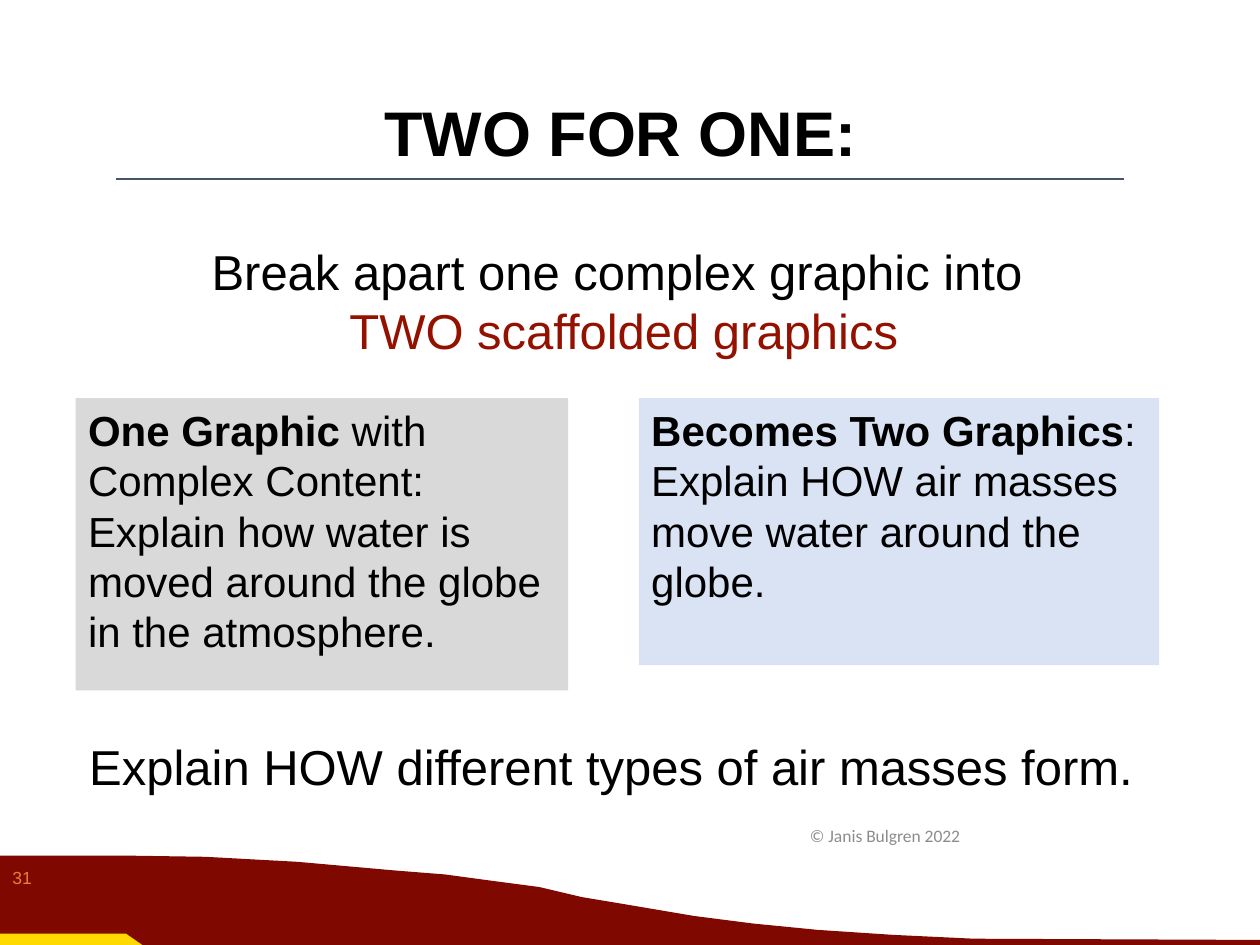
import pptx
import pptx.util
import pptx.dml.color
import pptx.enum.shapes
import pptx.enum.text
import pptx.oxml.xmlchemy
from pptx.util import Inches

COLORS = {
    "text": "000000", "accent": "941100", "muted": "8C8C8C", "number": "ED7D31",
    "gray": "D9D9D9", "blue": "DAE3F3", "rule": "44546A",
    "maroon": "7F0900", "gold": "FFD900",
}
LINE_FACTOR = 1.2


def rgb(name):
    return pptx.dml.color.RGBColor.from_string(COLORS[name])


def write(shape, paragraphs, size, color="text", font="Arial", align="LEFT", anchor="TOP"):
    """Fill a shape; each paragraph is a list of (text, run formats), "\\n" is a line break."""
    frame = shape.text_frame
    frame_formats = {
        "word_wrap": True,
        "auto_size": pptx.enum.text.MSO_AUTO_SIZE.NONE,
        "vertical_anchor": getattr(pptx.enum.text.MSO_ANCHOR, anchor),
    }
    for key, value in frame_formats.items():
        setattr(frame, key, value)
    for index, pieces in enumerate(paragraphs):
        paragraph = frame.paragraphs[0] if index == 0 else frame.add_paragraph()
        paragraph.alignment = getattr(pptx.enum.text.PP_ALIGN, align)
        paragraph.line_spacing = pptx.util.Pt(round(size * LINE_FACTOR, 1))
        for text, formats in pieces:
            if text == "\n":
                paragraph.add_line_break()
                continue
            run = paragraph.add_run()
            run.text = text
            run_formats = {"name": font, "size": pptx.util.Pt(size), "bold": False, **formats}
            run_color = run_formats.pop("color", color)
            for key, value in run_formats.items():
                setattr(run.font, key, value)
            run.font.color.rgb = rgb(run_color)


deck = pptx.Presentation()
deck.slide_width, deck.slide_height = Inches(10), Inches(7.5)
slide = deck.slides.add_slide(deck.slide_layouts[5])
shapes = slide.shapes

# Footer wave and corner
wave = [
    (10, 7.5), (0, 7.5), (0, 6.79), (0.46, 6.79), (0.98, 6.79), (1.63, 6.8),
    (2.36, 6.84), (3.15, 6.91), (3.53, 6.94), (3.9, 6.99), (4.28, 7.04),
    (4.62, 7.12), (4.86, 7.16), (5.51, 7.27), (5.98, 7.33), (6.49, 7.38),
    (7.09, 7.42), (7.73, 7.45), (10, 7.46),
]
corner = [(0, 7.41), (1, 7.41), (1.13, 7.5), (0, 7.5)]
for outline, color in ((wave, "maroon"), (corner, "gold")):
    points = [(Inches(x), Inches(y)) for x, y in outline]
    builder = shapes.build_freeform(*points[0])
    builder.add_line_segments(points[1:], close=True)
    band = builder.convert_to_shape()
    band.shadow.inherit = False
    band.fill.solid()
    band.fill.fore_color.rgb = rgb(color)
    band.line.fill.background()

# Rule under the heading
rule = shapes.add_connector(
    pptx.enum.shapes.MSO_CONNECTOR.STRAIGHT,
    Inches(0.92), Inches(1.42), Inches(8.92), Inches(1.42))
rule.line.color.rgb = rgb("rule")
rule.line.width = pptx.util.Pt(1.5)
rule._element.spPr.append(pptx.oxml.xmlchemy.OxmlElement("a:effectLst"))

# Title
title = shapes.title
title_place = {"left": 0.7, "top": 1.98, "width": 8.5, "height": 0.92}
for key, value in title_place.items():
    setattr(title, key, Inches(value))
write(title, [[("Break apart one complex graphic into ", {}), ("\n", {}),
               ("TWO scaffolded graphics", {"color": "accent"})]],
      28, align="CENTER", anchor="BOTTOM")

# Before and after panels
panels = [
    ((0.6, 3.16, 3.91, 2.32), "gray", [
        [("One Graphic ", {"bold": True}), ("with Complex Content:", {})],
        [("Explain how water is moved around the globe in the atmosphere.", {})]]),
    ((5.07, 3.16, 4.13, 2.12), "blue", [
        [("Becomes Two Graphics", {"bold": True}), (":", {})],
        [("Explain HOW air masses move water around the globe.", {})]]),
]
for place, color, paragraphs in panels:
    panel = shapes.add_shape(pptx.enum.shapes.MSO_SHAPE.RECTANGLE, *map(Inches, place))
    panel.shadow.inherit = False
    panel.fill.solid()
    panel.fill.fore_color.rgb = rgb(color)
    panel.line.fill.background()
    write(panel, paragraphs, 24)

# Heading, closing line, copyright and page number
labels = [
    ((0.95, 0.69, 7.95, 1.31), "TWO FOR ONE:", {"bold": True},
     {"size": 36, "align": "CENTER"}),
    ((0.61, 5.8, 8.65, 0.57), "Explain HOW different types of air masses form.", {},
     {"size": 28}),
    ((6.33, 6.5, 1.52, 0.27), "© Janis Bulgren 2022", {},
     {"size": 10, "color": "muted", "font": "Calibri"}),
    ((0, 6.83, 2.08, 0.33), "31", {}, {"size": 10, "color": "number"}),
]
for place, text, run_formats, formats in labels:
    label = shapes.add_textbox(*map(Inches, place))
    write(label, [[(text, run_formats)]], **formats)

deck.save("out.pptx")
